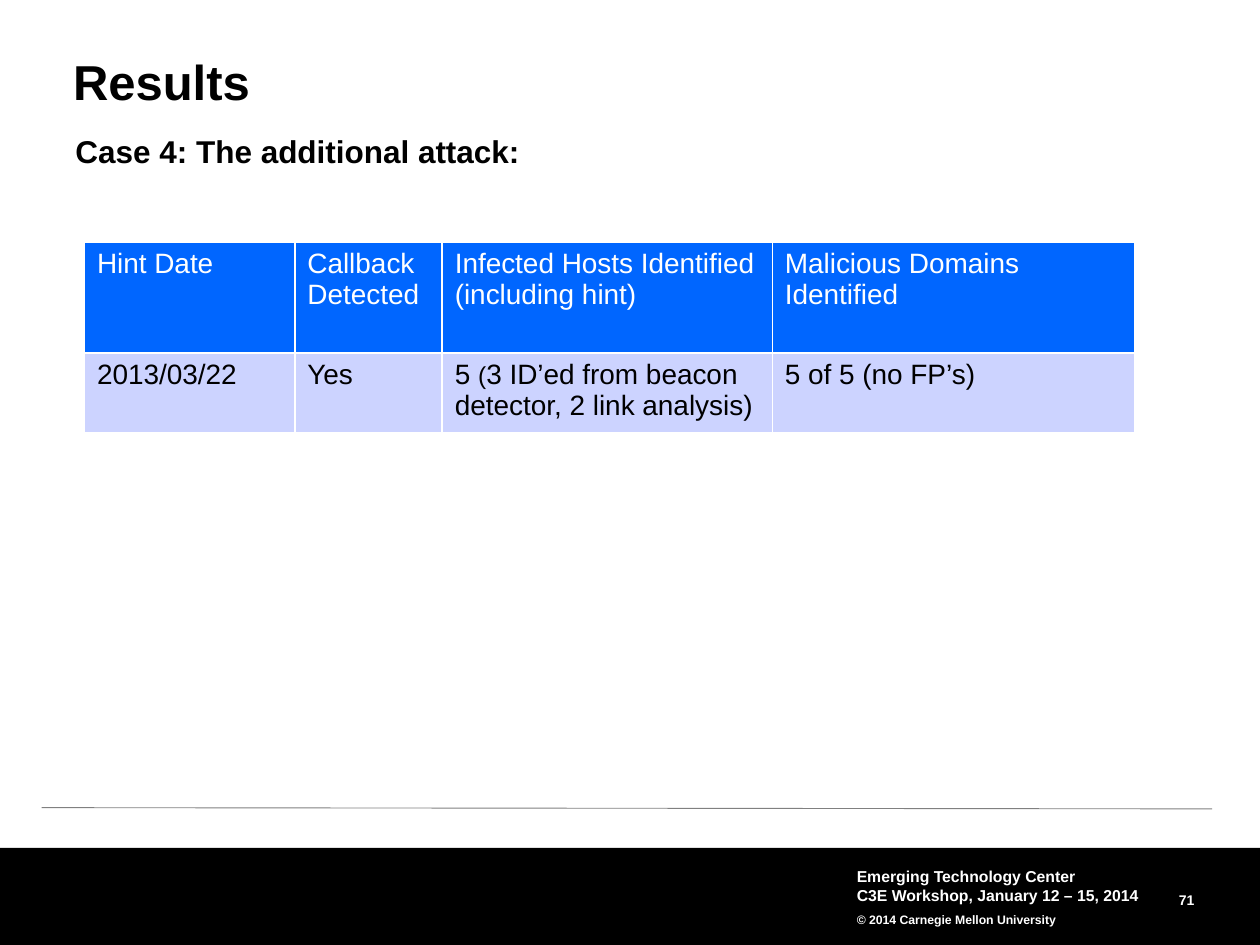
import pptx
import pptx.dml.color
import pptx.enum.shapes
import pptx.enum.text
import pptx.oxml
import pptx.oxml.ns
import pptx.util
from lxml import etree

Inches, Pt = pptx.util.Inches, pptx.util.Pt
ALIGN = pptx.enum.text.PP_ALIGN
ANCHOR = pptx.enum.text.MSO_ANCHOR

# Content
TITLE = "Results"
SUBTITLE = "Case 4: The additional attack:"
HEADER = ["Hint Date", "Callback Detected",
          "Infected Hosts Identified (including hint)",
          "Malicious Domains Identified"]
# A cell is a list of (text, size) runs
RESULT = [[("2013/03/22", 16)], [("Yes", 16)],
          [("5 ", 16), ("(", 14), ("3 ID’ed from beacon detector, 2 link analysis)", 16)],
          [("5 of 5 (no FP’s)", 16)]]
COLUMN_WIDTHS = [1.67, 1.17, 2.62, 2.88]
ROW_HEIGHTS = [0.88, 0.62]
FOOTER = [("Emerging Technology Center", 9, 1.0),
          ("C3E Workshop, January 12 – 15, 2014", 9, 1.0),
          ("© 2014 Carnegie Mellon University", 7, 1.5)]
PAGE_NUMBER = "71"


def color(value):
    return pptx.dml.color.RGBColor.from_string(value)


def style(span, size, ink, bold):
    span.font.name = "Arial"
    span.font.size = Pt(size)
    span.font.bold = bold
    span.font.color.rgb = color(ink)


def add_text(page, place, lines, ink="000000", margin=(0, 0),
             anchor=ANCHOR.TOP, align=ALIGN.LEFT):
    """Bold text box; each line is (text, size, line spacing)."""
    box = page.shapes.add_textbox(*map(Inches, place))
    frame = box.text_frame
    frame.word_wrap = True
    frame.vertical_anchor = anchor
    frame.margin_left = frame.margin_right = Inches(margin[0])
    frame.margin_top = frame.margin_bottom = Inches(margin[1])
    frame.text = "\n".join(line[0] for line in lines)
    for para, (_, size, spacing) in zip(frame.paragraphs, lines):
        para.alignment = align
        para.line_spacing = spacing
        style(para.runs[0], size, ink, True)


def fill_cell(cell, spans, ink, fill):
    cell.fill.solid()
    cell.fill.fore_color.rgb = color(fill)
    para = cell.text_frame.paragraphs[0]
    for text, size in spans:
        span = para.add_run()
        span.text = text
        style(span, size, ink, False)
    # White borders come before the fill in the cell properties
    properties = cell._tc.get_or_add_tcPr()
    for index, side in enumerate(("lnL", "lnR", "lnT", "lnB")):
        border = pptx.oxml.parse_xml(
            f'<a:{side} xmlns:a="http://schemas.openxmlformats.org/drawingml/2006/main" '
            f'w="{Pt(1)}"><a:solidFill><a:srgbClr val="FFFFFF"/></a:solidFill></a:{side}>')
        properties.insert(index, border)


def add_results(page):
    table = page.shapes.add_table(
        2, len(HEADER), Inches(0.67), Inches(1.92),
        Inches(sum(COLUMN_WIDTHS)), Inches(sum(ROW_HEIGHTS))).table
    for column, width in zip(table.columns, COLUMN_WIDTHS):
        column.width = Inches(width)
    for row, height in zip(table.rows, ROW_HEIGHTS):
        row.height = Inches(height)
    for index, (heading, spans) in enumerate(zip(HEADER, RESULT)):
        fill_cell(table.cell(0, index), [(heading, 16)], "FFFFFF", "0066FF")
        fill_cell(table.cell(1, index), spans, "000000", "CCD3FF")


def add_footer(page):
    rule = page.shapes.add_connector(
        pptx.enum.shapes.MSO_CONNECTOR.STRAIGHT,
        Inches(0.33), Inches(6.41), Inches(9.62), Inches(6.42))
    rule.line.color.rgb = color("808080")
    rule.line.width = Pt(0.5)
    etree.SubElement(rule._element.spPr, pptx.oxml.ns.qn("a:effectLst"))

    band = page.shapes.add_shape(
        pptx.enum.shapes.MSO_SHAPE.RECTANGLE,
        0, Inches(6.73), Inches(10), Inches(0.77))
    band.shadow.inherit = False
    band.fill.solid()
    band.fill.fore_color.rgb = color("000000")
    band.line.fill.background()

    add_text(page, (8.56, 7.03, 0.92, 0.18), [(PAGE_NUMBER, 8, Pt(13))],
             "FFFFFF", anchor=ANCHOR.MIDDLE, align=ALIGN.RIGHT)
    add_text(page, (6.75, 6.83, 2.5, 0.58), FOOTER, "FFFFFF",
             margin=(0.05, 0.05), anchor=ANCHOR.MIDDLE)


def main():
    deck = pptx.Presentation()
    deck.slide_width, deck.slide_height = Inches(10), Inches(7.5)
    page = deck.slides.add_slide(deck.slide_layouts[6])
    add_footer(page)
    add_text(page, (0.58, 0.46, 8.92, 0.42), [(TITLE, 28, 0.9)])
    add_results(page)
    add_text(page, (0.5, 1, 8.92, 0.4), [(SUBTITLE, 18, 1.0)], margin=(0.1, 0.05))
    deck.save("out.pptx")


if __name__ == "__main__":
    main()
